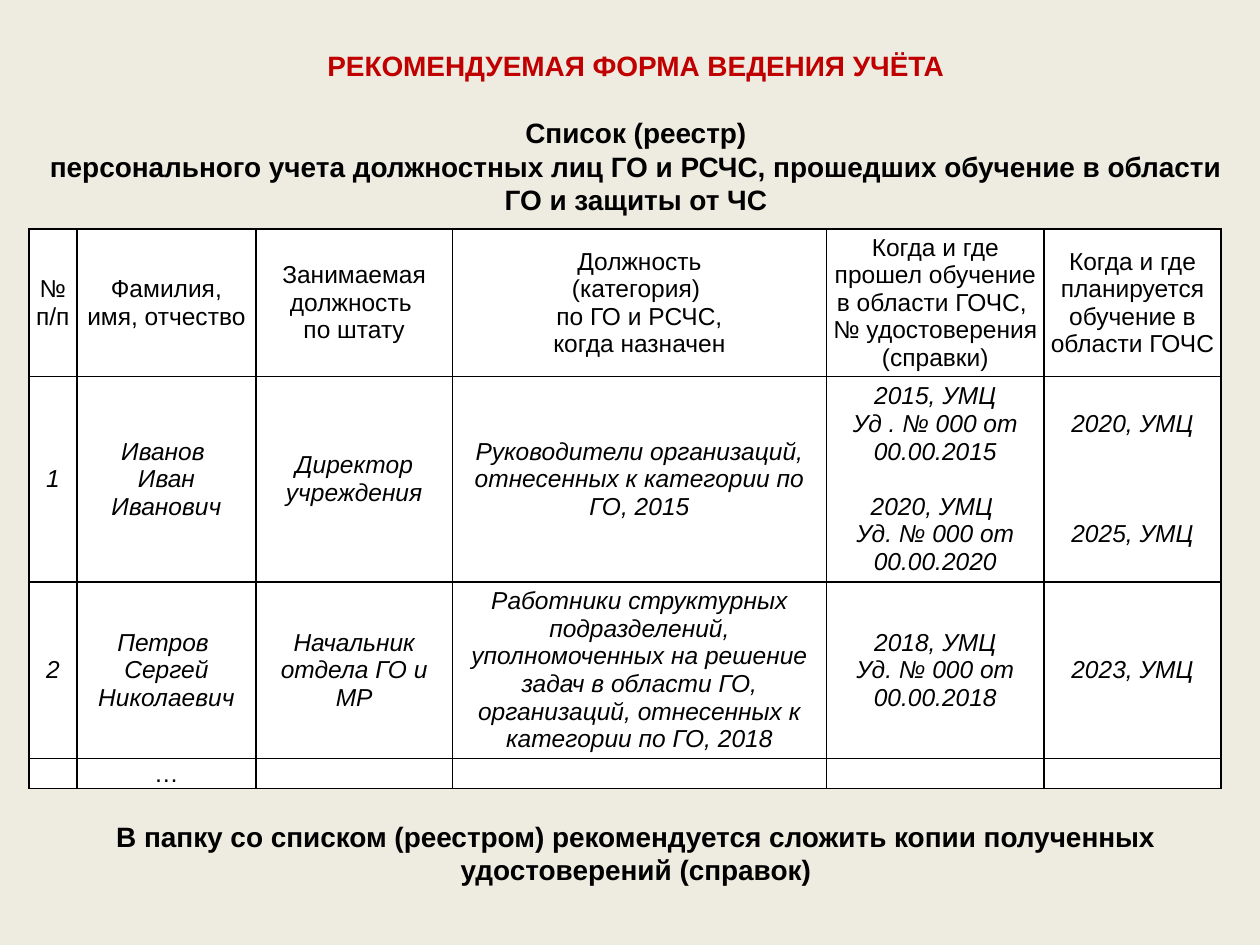
from dataclasses import dataclass

from lxml.etree import SubElement
from pptx import Presentation
from pptx.dml.color import RGBColor
from pptx.enum.text import MSO_ANCHOR, PP_ALIGN
from pptx.oxml.ns import qn
from pptx.util import Cm, Pt


@dataclass(frozen=True)
class Theme:
    font: str = "Arial"
    background: str = "EEECE1"
    accent: str = "C00000"
    ink: str = "000000"
    paper: str = "FFFFFF"
    heading_size: float = 16
    heading_line: float = 19.15
    cell_size: float = 14
    cell_line: float = 15.75
    border: float = 1


@dataclass(frozen=True)
class Para:
    text: str
    gap: int = 0  # empty lines above
    color: str = Theme.ink


class Deck:
    def __init__(self, theme):
        self.theme = theme
        self.prs = Presentation()
        self.prs.slide_width, self.prs.slide_height = Cm(25.4), Cm(19.05)

    def slide(self):
        self.s = self.prs.slides.add_slide(self.prs.slide_layouts[6])
        fill = self.s.background.fill
        fill.solid()
        fill.fore_color.rgb = RGBColor.from_string(self.theme.background)

    def add_paras(self, tf, paras, size, line, bold=False, italic=False):
        tf.word_wrap = True
        for i, para in enumerate(paras):
            p = tf.add_paragraph() if i else tf.paragraphs[0]
            p.alignment = PP_ALIGN.CENTER
            p.line_spacing = Pt(line)
            p.space_before = Pt(line * para.gap)
            p.font.size = Pt(size)
            if para.text:
                r = p.add_run()
                r.text = para.text
                f = r.font
                f.name, f.size, f.bold, f.italic = self.theme.font, Pt(size), bold, italic
                f.color.rgb = RGBColor.from_string(para.color)

    def text(self, left, top, width, height, paras):
        sp = self.s.shapes.add_textbox(Cm(left), Cm(top), Cm(width), Cm(height))
        tf = sp.text_frame
        tf.vertical_anchor = MSO_ANCHOR.MIDDLE
        self.add_paras(tf, paras, self.theme.heading_size, self.theme.heading_line, bold=True)

    def borders(self, cell):
        tc_pr = cell._tc.get_or_add_tcPr()
        for i, side in enumerate(("lnL", "lnR", "lnT", "lnB")):
            ln = SubElement(tc_pr, qn(f"a:{side}"), w=str(Pt(self.theme.border)))
            fill = SubElement(ln, qn("a:solidFill"))
            SubElement(fill, qn("a:srgbClr"), val=self.theme.ink)
            tc_pr.remove(ln)
            tc_pr.insert(i, ln)  # borders come before the fill

    def table(self, left, top, widths, heights, rows, italic_rows):
        tbl = self.s.shapes.add_table(
            len(heights), len(widths), Cm(left), Cm(top),
            Cm(sum(widths)), Cm(sum(heights))).table
        for col, width in zip(tbl.columns, widths):
            col.width = Cm(width)
        for row, height in zip(tbl.rows, heights):
            row.height = Cm(height)
        for i, row in enumerate(rows):
            for j, content in enumerate(row):
                cell = tbl.cell(i, j)
                cell.vertical_anchor = MSO_ANCHOR.MIDDLE
                cell.margin_left = cell.margin_right = Cm(0.13)
                cell.margin_top = cell.margin_bottom = 0
                cell.fill.solid()
                cell.fill.fore_color.rgb = RGBColor.from_string(self.theme.paper)
                self.borders(cell)
                paras = [c if isinstance(c, Para) else Para(c) for c in content]
                self.add_paras(cell.text_frame, paras, self.theme.cell_size,
                               self.theme.cell_line, italic=i in italic_rows)


HEADER = [
    ["№ п/п"],
    ["Фамилия, имя, отчество"],
    ["Занимаемая", "должность ", "по штату"],
    ["Должность", "(категория) ", "по ГО и РСЧС,", "когда назначен"],
    ["Когда и где прошел обучение в области ГОЧС, ", "№ удостоверения (справки)"],
    ["Когда и где планируется обучение в области ГОЧС"],
]
PEOPLE = [
    [
        ["1"],
        ["Иванов ", "Иван Иванович"],
        ["Директор учреждения"],
        ["Руководители организаций, отнесенных к категории по ГО, 2015"],
        ["2015, УМЦ", "Уд . № 000 от 00.00.2015",
         Para("2020, УМЦ ", gap=1), "Уд. № 000 от 00.00.2020"],
        ["2020, УМЦ", Para("2025, УМЦ", gap=3)],
    ],
    [
        ["2"],
        ["Петров ", "Сергей Николаевич"],
        ["Начальник отдела ГО и МР"],
        ["Работники структурных подразделений, уполномоченных на решение задач "
         "в области ГО, организаций, отнесенных к категории по ГО, 2018"],
        ["2018, УМЦ", "Уд. № 000 от 00.00.2018"],
        ["2023, УМЦ"],
    ],
]
MORE = [[""], ["…"], [""], [""], [""], [""]]


def main():
    theme = Theme()
    deck = Deck(theme)
    deck.slide()

    # Headings above the register and advice below it
    deck.text(0.41, 0.41, 24.82, 18.03, [
        Para("РЕКОМЕНДУЕМАЯ ФОРМА ВЕДЕНИЯ УЧЁТА", color=theme.accent),
        Para("Список (реестр)", gap=1),
        Para("персонального учета должностных лиц ГО и РСЧС, прошедших обучение "
             "в области ГО и защиты от ЧС"),
        Para("В папку со списком (реестром) рекомендуется сложить копии полученных "
             "удостоверений (справок)", gap=18),
    ])

    # Register of trained officials
    deck.table(0.58, 4.62, [0.97, 3.61, 3.96, 7.54, 4.39, 3.56],
               [2.97, 4.14, 3.56, 0.61], [HEADER, *PEOPLE, MORE], italic_rows=(1, 2))

    deck.prs.save("out.pptx")


if __name__ == "__main__":
    main()
